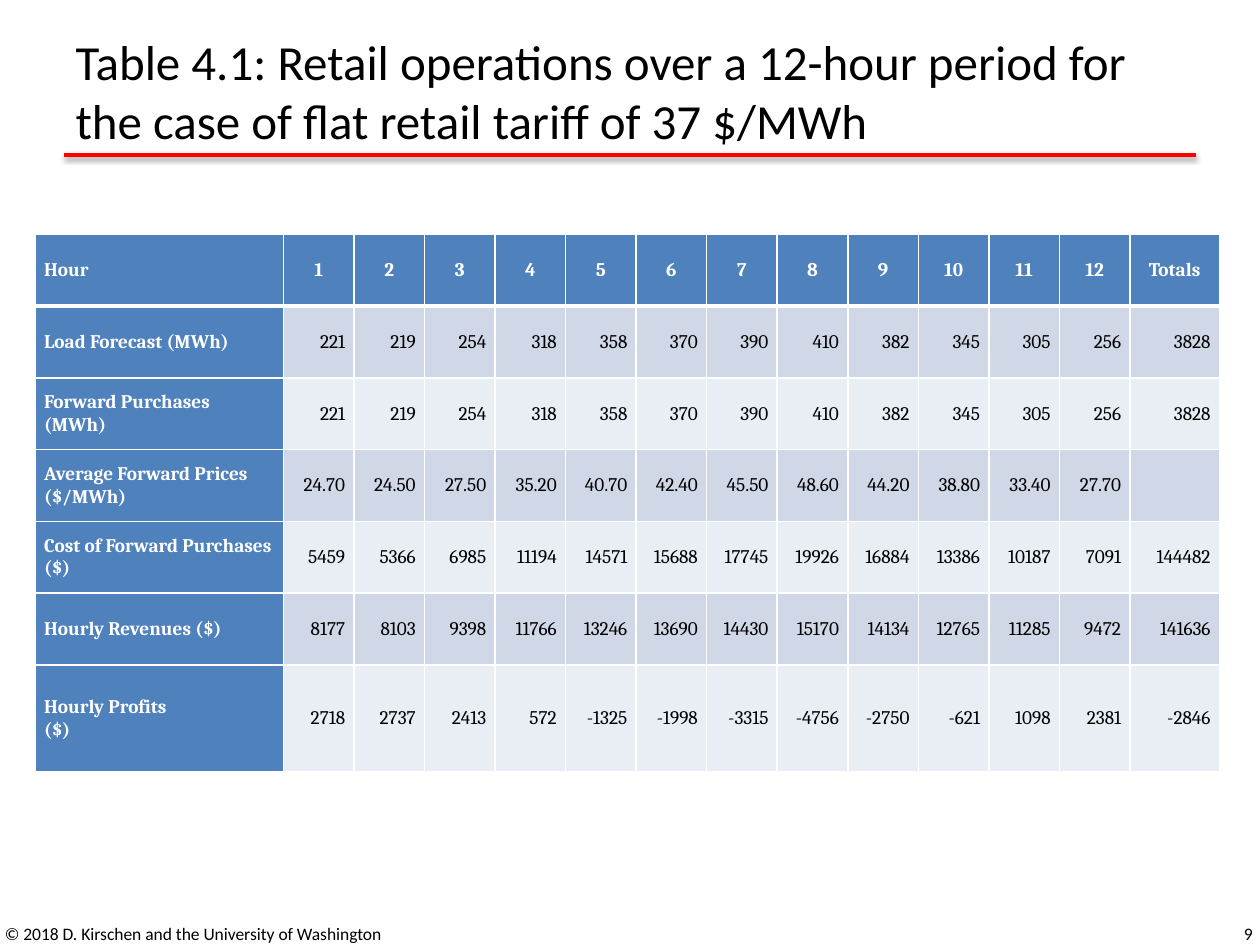
import pptx
import pptx.util
import pptx.dml.color
import pptx.enum.shapes
import pptx.enum.text
import pptx.oxml
import pptx.oxml.ns

Inches, Pt = pptx.util.Inches, pptx.util.Pt
RGBColor = pptx.dml.color.RGBColor
ALIGN, ANCHOR = pptx.enum.text.PP_ALIGN, pptx.enum.text.MSO_ANCHOR

BLACK = RGBColor(0x00, 0x00, 0x00)
WHITE = RGBColor(0xFF, 0xFF, 0xFF)
RED = RGBColor(0xFF, 0x00, 0x00)
HEADER = RGBColor(0x4F, 0x81, 0xBD)
BANDS = (RGBColor(0xD0, 0xD8, 0xE8), RGBColor(0xE9, 0xED, 0xF4))

TITLE_FONT = {"name": "Calibri", "size": Pt(28)}
FOOTER_FONT = {"name": "Calibri", "size": Pt(10)}
HEADER_FONT = {"name": "Cambria", "size": Pt(11), "bold": True}
BODY_FONT = {"name": "Cambria", "size": Pt(11), "bold": False}
CELL_FORMAT = {
    "vertical_anchor": ANCHOR.MIDDLE,
    "margin_left": Inches(0.07), "margin_right": Inches(0.07),
    "margin_top": 0, "margin_bottom": 0,
}

COL_WIDTHS = [1.97] + [0.56] * 12 + [0.71]
ROW_HEIGHTS = [0.57] * 6 + [0.85]
LOADS = "221 219 254 318 358 370 390 410 382 345 305 256 3828"
ROWS = [
    ("Hour", "1 2 3 4 5 6 7 8 9 10 11 12 Totals"),
    ("Load Forecast (MWh)", LOADS),
    ("Forward Purchases (MWh)", LOADS),
    ("Average Forward Prices ($/MWh)",
     "24.70 24.50 27.50 35.20 40.70 42.40 45.50 48.60 44.20 38.80 33.40 27.70"),
    ("Cost of Forward Purchases ($)",
     "5459 5366 6985 11194 14571 15688 17745 19926 16884 13386 10187 7091 144482"),
    ("Hourly Revenues ($)",
     "8177 8103 9398 11766 13246 13690 14430 15170 14134 12765 11285 9472 141636"),
    ("Hourly Profits\n($)",
     "2718 2737 2413 572 -1325 -1998 -3315 -4756 -2750 -621 1098 2381 -2846"),
]


def set_attrs(obj, values):
    for name, value in values.items():
        setattr(obj, name, value)


def write_text(tf, text, font, color=BLACK, align=ALIGN.LEFT):
    tf.text = text
    for p in tf.paragraphs:
        p.alignment = align
        for r in p.runs:
            set_attrs(r.font, font)
            r.font.color.rgb = color


def add_title(s, text):
    sp = s.shapes.title
    set_attrs(sp, {"left": Inches(0.5), "top": Inches(0.13),
                   "width": Inches(9), "height": Inches(1.17)})
    sp.text_frame.vertical_anchor = ANCHOR.MIDDLE
    write_text(sp.text_frame, text, TITLE_FONT)


def add_rule(s, left, right, y):
    line = s.shapes.add_connector(
        pptx.enum.shapes.MSO_CONNECTOR.STRAIGHT,
        Inches(left), Inches(y), Inches(right), Inches(y))
    line.line.color.rgb = RED
    line.line.width = Pt(2)
    # Soft shadow straight below the rule
    line._element.spPr.append(pptx.oxml.parse_xml(
        f'<a:effectLst {pptx.oxml.ns.nsdecls("a")}>'
        f'<a:outerShdw blurRad="{Pt(3.1)}" dist="{Pt(1.6)}" dir="5400000" rotWithShape="0">'
        '<a:srgbClr val="000000"><a:alpha val="38000"/></a:srgbClr>'
        '</a:outerShdw></a:effectLst>'))


def add_footer(s, text, left, width, align):
    sp = s.shapes.add_textbox(Inches(left), Inches(7.21), Inches(width), Inches(0.4))
    set_attrs(sp.text_frame, {"word_wrap": True, "vertical_anchor": ANCHOR.MIDDLE})
    write_text(sp.text_frame, text, FOOTER_FONT, align=align)


def add_borders(cell, top, bottom):
    tc_pr = cell._tc.get_or_add_tcPr()
    for side, width in (("L", 1), ("R", 1), ("T", top), ("B", bottom)):
        tc_pr.append(pptx.oxml.parse_xml(
            f'<a:ln{side} {pptx.oxml.ns.nsdecls("a")} w="{Pt(width)}">'
            f'<a:solidFill><a:srgbClr val="{WHITE}"/></a:solidFill></a:ln{side}>'))


def fill_cell(cell, text, row, col):
    heading = row == 0 or col == 0
    set_attrs(cell, CELL_FORMAT)
    # Thick line between the header row and the body
    add_borders(cell, top=3 if row == 1 else 1, bottom=3 if row == 0 else 1)
    cell.fill.solid()
    cell.fill.fore_color.rgb = HEADER if heading else BANDS[(row - 1) % 2]
    align = ALIGN.LEFT if col == 0 else ALIGN.CENTER if row == 0 else ALIGN.RIGHT
    write_text(cell.text_frame, text, HEADER_FONT if heading else BODY_FONT,
               WHITE if heading else BLACK, align)


def add_retail_table(s):
    table = s.shapes.add_table(
        len(ROWS), len(COL_WIDTHS), Inches(0.28), Inches(1.86),
        Inches(sum(COL_WIDTHS)), Inches(sum(ROW_HEIGHTS))).table
    table.first_col = True
    for column, width in zip(table.columns, COL_WIDTHS):
        column.width = Inches(width)
    for row, height in zip(table.rows, ROW_HEIGHTS):
        row.height = Inches(height)
    for i, (label, values) in enumerate(ROWS):
        texts = [label] + values.split()
        texts += [""] * (len(COL_WIDTHS) - len(texts))
        for j, text in enumerate(texts):
            fill_cell(table.cell(i, j), text, i, j)


def main():
    prs = pptx.Presentation()
    set_attrs(prs, {"slide_width": Inches(10), "slide_height": Inches(7.5)})
    s = prs.slides.add_slide(prs.slide_layouts[5])

    # Heading
    add_rule(s, 0.51, 9.49, 1.23)
    add_title(s, "Table 4.1: Retail operations over a 12-hour period for "
                 "the case of flat retail tariff of 37 $/MWh")
    # Footer
    add_footer(s, "© 2018 D. Kirschen and the University of Washington",
               -0.06, 3.88, ALIGN.LEFT)
    add_footer(s, "9", 7.71, 2.33, ALIGN.RIGHT)
    # Hourly figures
    add_retail_table(s)

    prs.save("out.pptx")


if __name__ == "__main__":
    main()
